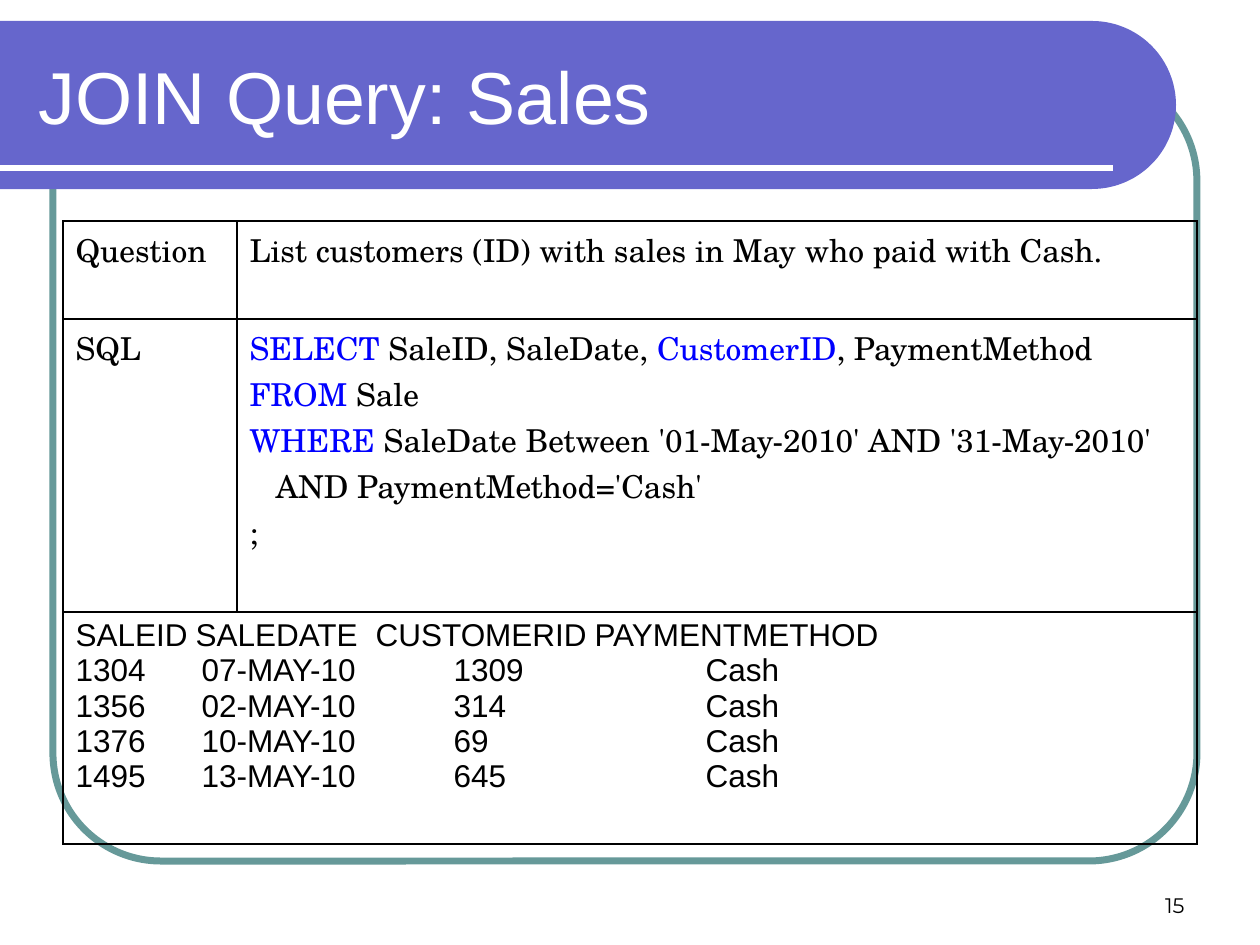
import math
from dataclasses import dataclass

from lxml import etree
from pptx import Presentation
from pptx.dml.color import RGBColor
from pptx.enum.shapes import MSO_CONNECTOR, MSO_SHAPE
from pptx.enum.text import MSO_ANCHOR, PP_ALIGN
from pptx.oxml.ns import qn
from pptx.util import Pt

LEFT, RIGHT = PP_ALIGN.LEFT, PP_ALIGN.RIGHT
MIDDLE, BOTTOM = MSO_ANCHOR.MIDDLE, MSO_ANCHOR.BOTTOM
ROUND_RECT, STRAIGHT = MSO_SHAPE.ROUNDED_RECTANGLE, MSO_CONNECTOR.STRAIGHT
BLANK_LAYOUT = 6


@dataclass(frozen=True)
class Theme:
    band: str = "6666CC"
    frame: str = "669999"
    white: str = "FFFFFF"
    black: str = "000000"
    keyword: str = "0000FF"
    sans: str = "Arial"
    serif: str = "TeX Gyre Schola"
    number_font: str = "Montserrat"
    title_size: int = 42
    body_size: int = 18
    number_size: int = 12
    serif_pitch: float = 26.3
    sans_pitch: float = 20.1


T = Theme()

QUESTION = [[("List customers (ID) with sales in May who paid with Cash.", T.black)]]
SQL = [
    [("SELECT ", T.keyword), ("SaleID, SaleDate, ", T.black),
     ("CustomerID", T.keyword), (", PaymentMethod", T.black)],
    [("FROM", T.keyword), (" Sale", T.black)],
    [("WHERE ", T.keyword),
     ("SaleDate Between '01-May-2010' AND '31-May-2010'", T.black)],
    [("AND PaymentMethod='Cash'", T.black)],
    [(";", T.black)],
]
SQL_CONDITION = 3
RESULT = [
    ("SALEID", "SALEDATE", "CUSTOMERID", "PAYMENTMETHOD"),
    ("1304", "07-MAY-10", "1309", "Cash"),
    ("1356", "02-MAY-10", "314", "Cash"),
    ("1376", "10-MAY-10", "69", "Cash"),
    ("1495", "13-MAY-10", "645", "Cash"),
]
HEADER_STOPS = (120, 300, 519)
DATA_STOPS = (126, 378, 630)


def px(n):
    return round(n * 914400 / 126)


def rgb(color):
    return RGBColor.from_string(color)


def add_run(p, text, font, size, color):
    r = p.add_run()
    r.text = text
    r.font.name = font
    r.font.size = Pt(size)
    r.font.color.rgb = rgb(color)


def add_text(s, box, text, font, size, color, align, anchor):
    tf = s.shapes.add_textbox(*map(px, box)).text_frame
    tf.word_wrap = True
    tf.vertical_anchor = anchor
    p = tf.paragraphs[0]
    p.alignment = align
    add_run(p, text, font, size, color)


def add_frame(s, box):
    sp = s.shapes.add_shape(ROUND_RECT, *map(px, box))
    sp.adjustments[0] = 0.137
    sp.shadow.inherit = False
    sp.fill.background()
    sp.line.color.rgb = rgb(T.frame)
    sp.line.width = Pt(4)


def add_title_band(s, box, title):
    """Band with a half-round right end, a white rule and the title."""
    x, y, w, h = box
    radius = h / 2
    cx, cy = x + w - radius, y + radius
    arc = [(px(cx + radius * math.cos(math.radians(a))),
            px(cy + radius * math.sin(math.radians(a)))) for a in range(-90, 91, 2)]
    builder = s.shapes.build_freeform(px(x), px(y))
    builder.add_line_segments(arc + [(px(x), px(y + h))], close=True)
    sp = builder.convert_to_shape()
    sp.shadow.inherit = False
    sp.fill.solid()
    sp.fill.fore_color.rgb = rgb(T.band)
    sp.line.fill.background()

    rule_y = px(y + h - 21)
    rule = s.shapes.add_connector(STRAIGHT, px(x), rule_y, px(x + w - 63), rule_y)
    rule.line.color.rgb = rgb(T.white)
    rule.line.width = Pt(3)
    etree.SubElement(rule._element.spPr, qn("a:effectLst"))

    add_text(s, (x + 26, y + 11, w - 71, 126), title,
             T.sans, T.title_size, T.white, LEFT, MIDDLE)


def style_cell(cell):
    """Clear the fill and draw thin black borders."""
    cell.fill.background()
    tc_pr = cell._tc.get_or_add_tcPr()
    for i, side in enumerate(("lnL", "lnR", "lnT", "lnB")):
        ln = etree.Element(qn(f"a:{side}"), w=str(Pt(1)))
        fill = etree.SubElement(ln, qn("a:solidFill"))
        etree.SubElement(fill, qn("a:srgbClr"), val=T.black)
        tc_pr.insert(i, ln)


def fill_cell(cell, lines, font, pitch):
    """Write one paragraph for each line of (text, color) runs."""
    tf = cell.text_frame
    for i, line in enumerate(lines):
        p = tf.paragraphs[0] if i == 0 else tf.add_paragraph()
        p.alignment = LEFT
        p.line_spacing = Pt(pitch)
        for text, color in line:
            add_run(p, text, font, T.body_size, color)
    return tf.paragraphs


def set_tab_stops(p, stops):
    tab_list = etree.SubElement(p._p.get_or_add_pPr(), qn("a:tabLst"))
    for stop in stops:
        etree.SubElement(tab_list, qn("a:tab"), pos=str(px(stop)), algn="l")


def add_query_table(s, box, col_widths, row_heights):
    table = s.shapes.add_table(len(row_heights), len(col_widths), *map(px, box)).table
    table.first_row = table.horz_banding = False
    for col, width in zip(table.columns, col_widths):
        col.width = px(width)
    for row, height in zip(table.rows, row_heights):
        row.height = px(height)
    for cell in table.iter_cells():
        style_cell(cell)
    table.cell(2, 0).merge(table.cell(2, 1))

    for row, (label, lines) in enumerate((("Question", QUESTION), ("SQL", SQL))):
        fill_cell(table.cell(row, 0), [[(label, T.black)]], T.serif, T.serif_pitch)
        paragraphs = fill_cell(table.cell(row, 1), lines, T.serif, T.serif_pitch)
    paragraphs[SQL_CONDITION]._p.get_or_add_pPr().set("marL", str(px(26)))

    lines = [[("\t".join(record), T.black)] for record in RESULT]
    paragraphs = fill_cell(table.cell(2, 0), lines, T.sans, T.sans_pitch)
    for i, p in enumerate(paragraphs):
        set_tab_stops(p, DATA_STOPS if i else HEADER_STOPS)


def main():
    prs = Presentation()
    prs.slide_width, prs.slide_height = px(1260), px(945)
    s = prs.slides.add_slide(prs.slide_layouts[BLANK_LAYOUT])
    add_frame(s, (53, 73, 1144, 788))
    add_title_band(s, (0, 21, 1176, 168), "JOIN Query: Sales")
    add_text(s, (903, 861, 294, 63), "15",
             T.number_font, T.number_size, T.black, RIGHT, BOTTOM)
    add_query_table(s, (63, 221, 1134, 623), (174, 960), (98, 293, 232))
    prs.save("out.pptx")


if __name__ == "__main__":
    main()
